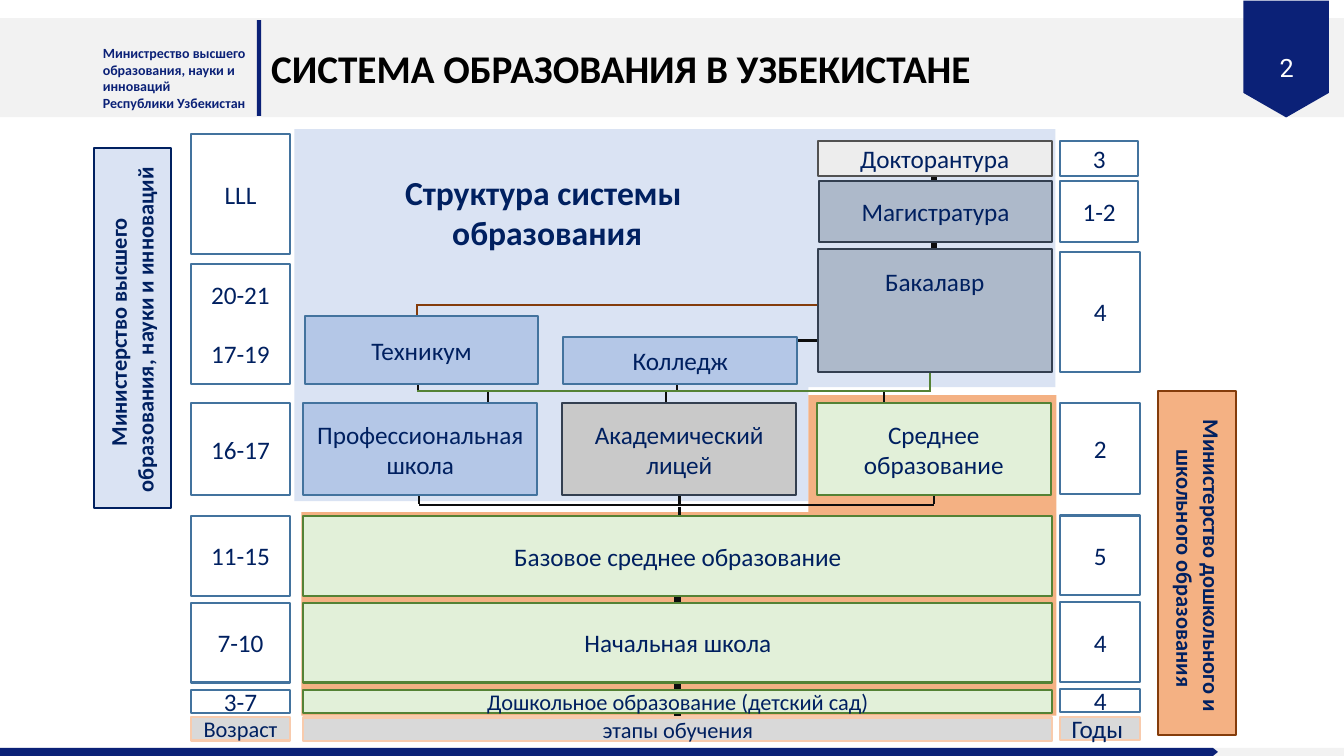
from dataclasses import dataclass
from lxml import etree
from pptx import Presentation
from pptx.dml.color import RGBColor
from pptx.enum.shapes import MSO_CONNECTOR, MSO_SHAPE
from pptx.enum.text import MSO_ANCHOR, PP_ALIGN
from pptx.oxml.ns import qn
from pptx.util import Pt

RECT, PLATE = MSO_SHAPE.RECTANGLE, MSO_SHAPE.PENTAGON
LINE = MSO_CONNECTOR.STRAIGHT
TOP, MID = MSO_ANCHOR.TOP, MSO_ANCHOR.MIDDLE
LEFT, MIDST = PP_ALIGN.LEFT, PP_ALIGN.CENTER


@dataclass(frozen=True)
class Theme:
    font: str = "Calibri"
    alt: str = "Roboto"
    navy: str = "0B2177"
    ink: str = "002060"
    black: str = "000000"
    white: str = "FFFFFF"
    pale: str = "F2F2F2"
    sky: str = "DAE3F3"
    blue: str = "B4C7E7"
    edge: str = "43739E"
    steel: str = "ADB9CA"
    slate: str = "333F50"
    ash: str = "C9C9C9"
    fog: str = "EDEDED"
    smoke: str = "525252"
    grey: str = "D9D9D9"
    peach: str = "F8CBAD"
    sand: str = "F4B183"
    rust: str = "843C0B"
    mint: str = "E2F0D9"
    green: str = "548235"
    dark: str = "0D0D0D"
    tiny: int = 10
    small: int = 16
    body: int = 18
    large: int = 24
    head: int = 28
    thin: float = 1.5
    thick: float = 4.5


T = Theme()
STAGE = dict(fill=T.mint, edge=T.green)
SCHOOL = dict(fill=T.blue, edge=T.edge)
DEGREE = dict(fill=T.steel, edge=T.slate)
LABEL = dict(fill=T.grey, edge=T.peach)


def rgb(code):
    return RGBColor.from_string(code)


def write(shape, text, size=T.body, color=T.ink, font=T.font, bold=False,
          align=MIDST, anchor=MID, wrap=True, inset=3.6):
    frame = shape.text_frame
    frame.word_wrap = wrap
    frame.vertical_anchor = anchor
    frame.margin_left = frame.margin_right = Pt(7.2)
    frame.margin_top, frame.margin_bottom = Pt(inset), Pt(3.6)
    frame.text = text
    for para in frame.paragraphs:
        para.alignment = align
        para.font.size, para.font.bold = Pt(size), bold
        for run in para.runs:
            run.font.size, run.font.bold = Pt(size), bold
            run.font.name = font
            run.font.color.rgb = rgb(color)


def paint(shape, fill, edge=None):
    shape.shadow.inherit = False
    if fill:
        shape.fill.solid()
        shape.fill.fore_color.rgb = rgb(fill)
    else:
        shape.fill.background()
    if edge:
        shape.line.color.rgb = rgb(edge)
        shape.line.width = Pt(T.thin)
    else:
        shape.line.fill.background()


def block(slide, x, y, w, h, text="", fill=None, edge=None, kind=RECT, **form):
    shape = slide.shapes.add_shape(kind, Pt(x), Pt(y), Pt(w), Pt(h))
    paint(shape, fill, edge)
    if text:
        write(shape, text, **form)
    return shape


def note(slide, x, y, w, h, text, **form):
    shape = slide.shapes.add_textbox(Pt(x), Pt(y), Pt(w), Pt(h))
    write(shape, text, **form)
    return shape


def patch(slide, x, y, spots, fill):
    spots = [(Pt(x + dx), Pt(y + dy)) for dx, dy in spots]
    outline = slide.shapes.build_freeform(*spots[0])
    outline.add_line_segments(spots[1:], close=True)
    paint(outline.convert_to_shape(), fill)


def wire(slide, x, y, ends, color=T.dark, width=T.thin):
    ax, ay, bx, by = ends
    link = slide.shapes.add_connector(
        LINE, Pt(x + ax), Pt(y + ay), Pt(x + bx), Pt(y + by))
    link.line.color.rgb = rgb(color)
    link.line.width = Pt(width)
    etree.SubElement(link._element.spPr, qn("a:effectLst"))


def header(slide, x, y, w, h):
    block(slide, x, y, w, h, fill=T.pale)
    flag = block(slide, x + 877, y - 1.4, 83.4, 61.2, fill=T.navy, kind=PLATE)
    flag.adjustments[0] = 0.287
    flag.rotation = 90
    block(slide, x + 183.6, y + 1.4, 2.9, 68.4, fill=T.navy)
    note(slide, x + 66.4, y + 15.1, 117.4, 55.4,
         "Министрество высшего образования, науки и инноваций \vРеспублики Узбекистан",
         size=T.tiny, color=T.navy, bold=True, align=LEFT, anchor=TOP)
    note(slide, x + 888.5, y + 20.8, 61.2, 28.8, "2", color=T.white, font=T.alt)
    title = slide.shapes.title
    title.left, title.top, title.width, title.height = (
        Pt(x + 186.5), Pt(y), Pt(702), Pt(h))
    write(title, "СИСТЕМА ОБРАЗОВАНИЯ В УЗБЕКИСТАНЕ", size=T.head,
          color=T.black, bold=True, align=LEFT)
    slide.shapes._spTree.append(title._element)


def footer(slide, x, y, w, h):
    block(slide, x, y, w, h, fill=T.pale)
    strip = block(slide, x, y, w - 90, h, fill=T.navy, kind=PLATE)
    strip.adjustments[0] = 0.617


def column(slide, x, y, w, upper, lower, label, size):
    for top, wide, high, text in upper:
        block(slide, x, y + top, wide, high, text, edge=T.edge)
    spans = ((192.2, 65.5), (272.8, 56.9), (334.8, 56.9), (396.9, 16.6))
    for (top, high), text in zip(spans, lower):
        block(slide, x, y + top, w, high, text, edge=T.edge)
    block(slide, x, y + 416.6, w, 16.6, label, size=size, **LABEL)


def ages(slide, x, y, w):
    column(slide, x, y, w, ((0, w, 85.7, "LLL"), (92.8, w, 85.7, "")),
           ("16-17", "11-15", "7-10", "3-7"), "Возраст", T.small)
    for top, text in ((102.2, "20-21"), (144.2, "17-19")):
        note(slide, x - 0.5, y + top, w + 0.8, 24.5, text)


def years(slide, x, y, w):
    column(slide, x, y, w,
           ((5.4, w - 1.4, 25.2, "3"), (33.7, w - 1.4, 43.9, "1-2"),
            (84.4, w, 85.7, "4")),
           ("2", "5", "4", "4"), "Годы ", T.body)


def ladder(slide, x, y):
    patch(slide, x, y, ((0, 0), (543.6, 0), (543.6, 184.3), (367.2, 184.3),
                        (367.2, 265.7), (0, 265.7)), T.sky)
    wire(slide, x, y, (454.3, 166.3, 454.3, 187.9), T.green)
    wire(slide, x, y, (456.8, 17.3, 456.8, 118.1), width=T.thick)
    patch(slide, x, y, ((367.2, 190.1), (544.3, 190.1), (544.3, 419), (5, 419),
                        (5, 273.6), (367.2, 273.6)), T.sand)
    wire(slide, x, y, (383, 151, 358.6, 151))
    for ends in ((87.8, 125.3, 87.8, 151.2), (87.8, 125.7, 455, 125.7)):
        wire(slide, x, y, ends, T.rust)
    for dx in (138.2, 265.7, 421.2):
        wire(slide, x, y, (dx, 187.2, dx, 203.8))
    for dx in (88.6, 273.6):
        wire(slide, x, y, (dx, 180, dx, 186.5))
    for dx in (89.3, 275.2, 456.8):
        wire(slide, x, y, (dx, 261.4, dx, 267.8))
    wire(slide, x, y, (275.2, 270, 275.2, 276.5))
    wire(slide, x, y, (273.8, 276.5, 273.8, 420.5), width=T.thick)
    wire(slide, x, y, (89.3, 268.6, 456.8, 268.6))
    wire(slide, x, y, (87.8, 187.2, 455, 187.2), T.green)

    for dy, high, text, form in (
            (276.5, 56.9, "Базовое среднее образование", STAGE),
            (338.4, 56.9, "Начальная школа", STAGE),
            (400.4, 16.6, "Дошкольное образование (детский сад)",
             dict(STAGE, size=T.small)),
            (420.3, 16.6, "этапы обучения", dict(LABEL, size=T.small))):
        block(slide, x + 6.5, y + dy, 535, high, text, **form)
    for dx, dy, high, text, form in (
            (6.5, 195.8, 65.5, "Профессиональная школа", SCHOOL),
            (191.5, 195.8, 65.5, "Академический лицей",
             dict(fill=T.ash, edge=T.slate)),
            (373.3, 195.8, 65.5, "Среднее образование", STAGE),
            (7.4, 133.4, 49, "Техникум", SCHOOL),
            (192.2, 148.3, 33.8, "Колледж", SCHOOL),
            (374, 85.7, 87.8, "Бакалавр", dict(DEGREE, anchor=TOP, inset=12.2)),
            (374.6, 36.9, 43.9, "Магистратура", DEGREE),
            (374, 8.6, 25.2, "Докторантура", dict(fill=T.fog, edge=T.smoke))):
        block(slide, x + dx, y + dy, 167, high, text, **form)
    note(slide, x + 11.5, y + 19.4, 338.4, 80, "Структура системы \nобразования",
         size=T.large, bold=True)


def side(slide, x, y, w, h, text, turn, dx, dy, **form):
    block(slide, x, y, w, h, **form)
    mid, half = y + h / 2 + dy, 23
    panel = note(slide, x + w / 2 - h / 2 + dx, mid - half, h, 2 * half, text,
                 size=T.small, bold=True, anchor=TOP, wrap=False)
    panel.rotation = turn


def main():
    deck = Presentation()
    deck.slide_width, deck.slide_height = Pt(960), Pt(540)
    slide = deck.slides.add_slide(deck.slide_layouts[5])
    header(slide, 0, 13, 960, 70.6)
    footer(slide, 0, 534.2, 960, 5.8)
    ladder(slide, 210.2, 92.2)
    ages(slide, 136.5, 95.8, 70.6)
    years(slide, 757.4, 95.4, 56.9)
    side(slide, 67, 105.8, 55.4, 257,
         "Министерство высшего \nобразования, науки и инноваций", 270, -0.7, 1.2,
         fill=T.sky, edge=T.ink)
    side(slide, 827.3, 279.4, 55.4, 245.5,
         "Министерство дошкольного и \nшкольного образования", 90, 1, 3.8,
         fill=T.sand, edge=T.rust)
    deck.save("out.pptx")


if __name__ == "__main__":
    main()
